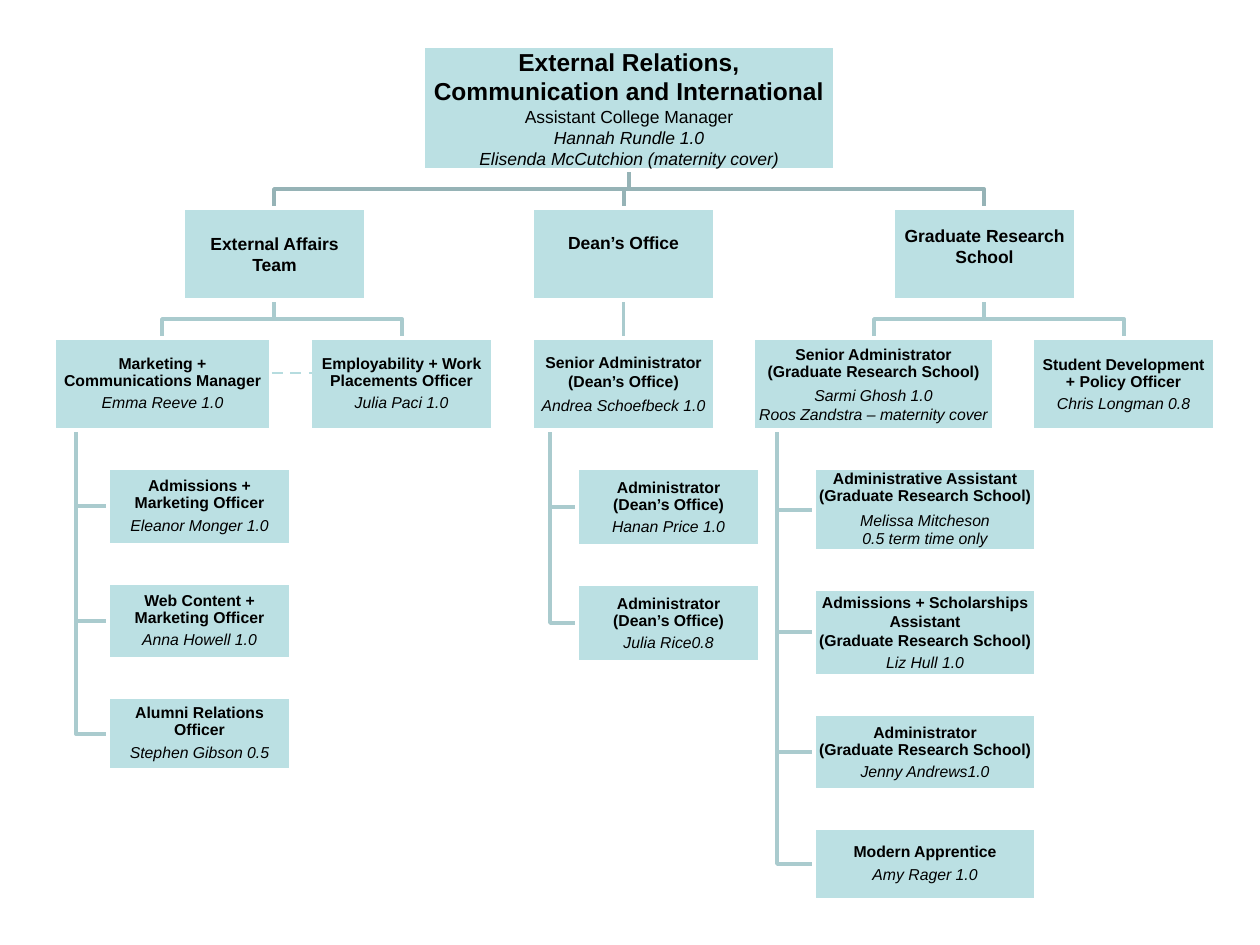
from lxml.etree import SubElement
from pptx import Presentation
from pptx.dml.color import RGBColor
from pptx.enum.dml import MSO_LINE
from pptx.enum.shapes import MSO_CONNECTOR as Connector, MSO_SHAPE as Shape
from pptx.enum.text import MSO_ANCHOR as Anchor, MSO_AUTO_SIZE as AutoSize, PP_ALIGN as Align
from pptx.oxml.ns import qn
from pptx.util import Pt

PX = 914400 / 126
BOX_FILL = RGBColor(0xBB, 0xE0, 0xE3)
BORDER = RGBColor(0xFF, 0xFF, 0xFF)
TEXT = RGBColor(0x00, 0x00, 0x00)
TOP_LINE = RGBColor(0x96, 0xB3, 0xB6)
TEAM_LINE = RGBColor(0xAA, 0xCB, 0xCE)
DASH_LINE = RGBColor(0xB6, 0xDC, 0xDF)

FIRST_TOP, GAP = 46, 38
ROOT_LEFT, ROOT_WIDTH, ROOT_HEIGHT = 423, 412, 124
BOX_WIDTH, BOX_HEIGHT = 183, 92
TEAM_TOP = FIRST_TOP + ROOT_HEIGHT + GAP
LEAD_TOP = TEAM_TOP + BOX_HEIGHT + GAP
STAFF_TOP = LEAD_TOP + BOX_HEIGHT + GAP

# style: size, bold, italic, line spacing, space after
STYLES = {
    "heading": (14, True, False, 1, 0),
    "post": (10, False, False, 1, 0),
    "holder": (10, False, True, 1, 0),
    "team": (10, True, False, 1, 0),
    "role": (9, True, False, 1, 0),
    "spaced": (9, True, False, 1, 3),
    "tight": (9, True, False, 0.9, 3),
    "name": (9, False, True, 0.9, 3),
    "person": (9, False, True, 1, 0),
}

ROOT = [
    ("heading", "External Relations,"),
    ("heading", "Communication and International"),
    ("post", "Assistant College Manager"),
    ("holder", "Hannah Rundle 1.0"),
    ("holder", "Elisenda McCutchion (maternity cover)"),
]

# team: left, bottom inset, lines, leads
# lead: left, width, lines, staff left, staff width, staff (height, lines)
TEAMS = [
    (183, 1, [("team", "External Affairs"), ("team", "Team")], [
        (54, 217, [("tight", "Marketing + Communications Manager"), ("name", "Emma Reeve 1.0")], 108, 183, [
            (77, [("tight", "Admissions + Marketing Officer"), ("name", "Eleanor Monger 1.0")]),
            (76, [("tight", "Web Content + Marketing Officer"), ("name", "Anna Howell 1.0", -17)]),
            (73, [("tight", "Alumni Relations Officer"), ("name", "Stephen Gibson 0.5")]),
        ]),
        (310, 183, [("tight", "Employability + Work Placements Officer"), ("name", "Julia Paci 1.0")], 0, 0, []),
    ]),
    (532, 24, [("team", "Dean’s Office")], [
        (532, 183, [("role", "Senior Administrator"), ("spaced", "(Dean’s Office)"),
                    ("person", "Andrea Schoefbeck 1.0")], 577, 183, [
            (78, [("role", "Administrator"), ("tight", "(Dean’s Office)"), ("name", "Hanan Price 1.0", -26)]),
            (78, [("role", "Administrator"), ("tight", "(Dean’s Office)"), ("name", "Julia Rice0.8")]),
        ]),
    ]),
    (893, 17, [("team", "Graduate Research"), ("team", "School")], [
        (753, 241, [("role", "Senior Administrator"), ("tight", "(Graduate Research School)"),
                    ("person", "Sarmi Ghosh 1.0"), ("person", "Roos Zandstra – maternity cover")], 814, 222, [
            (83, [("tight", "Administrative Assistant (Graduate Research School)"),
                  ("person", "Melissa Mitcheson"), ("person", "0.5 term time only")]),
            (87, [("role", "Admissions + Scholarships Assistant"), ("spaced", "(Graduate Research School)"),
                  ("name", "Liz Hull 1.0")]),
            (76, [("role", "Administrator"), ("tight", "(Graduate Research School)"),
                  ("name", "Jenny Andrews1.0")]),
            (72, [("tight", "Modern Apprentice"), ("name", "Amy Rager 1.0")]),
        ]),
        (1032, 183, [("role", "Student Development", -9), ("tight", "+ Policy Officer"),
                     ("name", "Chris Longman 0.8")], 0, 0, []),
    ]),
]


def emu(*lengths):
    return [round(length * PX) for length in lengths]


def write_lines(shape, lines, bottom_inset):
    frame = shape.text_frame
    frame.word_wrap = True
    frame.auto_size = AutoSize.NONE
    frame.vertical_anchor = Anchor.MIDDLE
    frame.margin_left = frame.margin_right = frame.margin_top = emu(1)[0]
    frame.margin_bottom = emu(bottom_inset)[0]
    frame.text = "\n".join(line[1] for line in lines)
    for paragraph, (style, _, *shift) in zip(frame.paragraphs, lines):
        size, bold, italic, spacing, after = STYLES[style]
        paragraph.alignment = Align.CENTER
        paragraph.line_spacing = spacing
        paragraph.space_after = Pt(after)
        if shift:
            paragraph._p.get_or_add_pPr().set("indent", str(emu(shift[0])[0]))
        font = paragraph.runs[0].font
        font.name, font.size, font.bold, font.italic = "Arial", Pt(size), bold, italic
        font.color.rgb = TEXT


def style_box(shape, lines, bottom_inset=1):
    shape.fill.solid()
    shape.fill.fore_color.rgb = BOX_FILL
    shape.line.color.rgb = BORDER
    shape.line.width = Pt(2)
    write_lines(shape, lines, bottom_inset)


def add_box(slide, bounds, lines, bottom_inset=1):
    shape = slide.shapes.add_shape(Shape.RECTANGLE, *emu(*bounds))
    shape.shadow.inherit = False
    style_box(shape, lines, bottom_inset)


def add_straight(slide, start, end, color, width):
    line = slide.shapes.add_connector(Connector.STRAIGHT, *emu(*start, *end))
    line.line.color.rgb = color
    line.line.width = Pt(width)
    SubElement(line._element.spPr, qn("a:effectLst"))
    return line


def add_link(slide, points, color):
    if len({x for x, _ in points}) == 1:
        add_straight(slide, points[0], points[-1], color, 2)
        return
    builder = slide.shapes.build_freeform(*points[0], scale=PX)
    builder.add_line_segments(points[1:], close=False)
    shape = builder.convert_to_shape()
    shape.shadow.inherit = False
    shape.fill.background()
    shape.line.color.rgb = color
    shape.line.width = Pt(2)


def add_fork(slide, parent_x, child_x, child_top, color):
    middle = child_top - GAP / 2
    add_link(slide, [(parent_x, child_top - GAP), (parent_x, middle),
                     (child_x, middle), (child_x, child_top)], color)


def main():
    presentation = Presentation()
    presentation.slide_width, presentation.slide_height = emu(1260, 945)
    slide = presentation.slides.add_slide(presentation.slide_layouts[5])

    boxes = []
    for team_left, inset, team_lines, leads in TEAMS:
        team_x = team_left + BOX_WIDTH / 2
        add_fork(slide, ROOT_LEFT + ROOT_WIDTH / 2, team_x, TEAM_TOP, TOP_LINE)
        boxes.append(((team_left, TEAM_TOP, BOX_WIDTH, BOX_HEIGHT), team_lines, inset))
        for left, width, lines, staff_left, staff_width, staff in leads:
            add_fork(slide, team_x, left + width / 2, LEAD_TOP, TEAM_LINE)
            boxes.append(((left, LEAD_TOP, width, BOX_HEIGHT), lines))
            trunk_x, top = left + width / 10, STAFF_TOP
            for height, staff_lines in staff:
                middle = top + height / 2
                add_link(slide, [(trunk_x, LEAD_TOP + BOX_HEIGHT), (trunk_x, middle),
                                 (staff_left, middle)], TEAM_LINE)
                boxes.append(((staff_left, top, staff_width, height), staff_lines))
                top += height + GAP

    title = slide.shapes.title
    title.left, title.top, title.width, title.height = emu(ROOT_LEFT, FIRST_TOP, ROOT_WIDTH, ROOT_HEIGHT)
    style_box(title, ROOT)
    slide.shapes._spTree.append(title._element)
    for box in boxes:
        add_box(slide, *box)

    dash = add_straight(slide, (272, 373), (312, 373), DASH_LINE, 1.5)
    dash.line.dash_style = MSO_LINE.DASH
    presentation.save("out.pptx")


if __name__ == "__main__":
    main()
